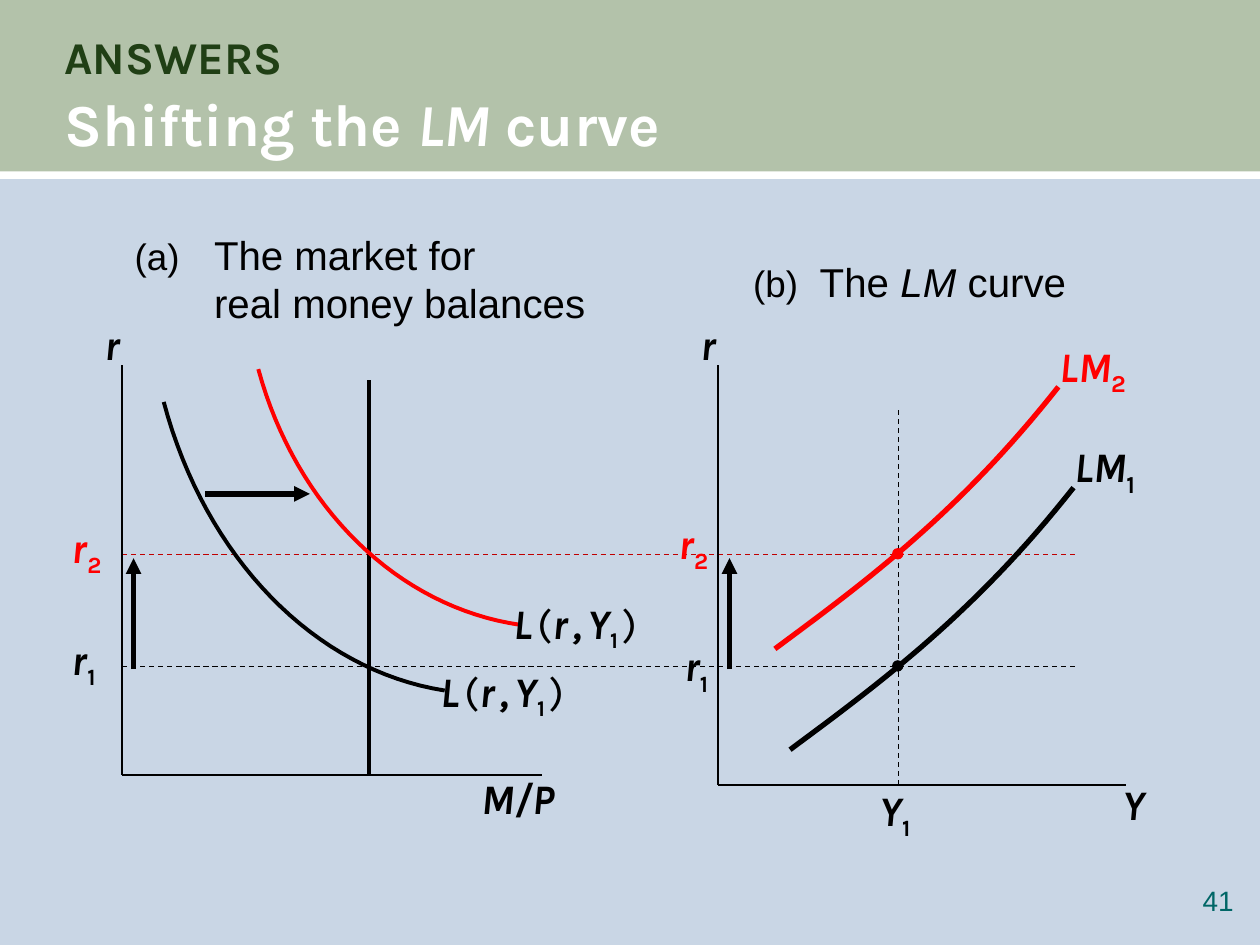
from lxml import etree
from pptx import Presentation
from pptx.dml.color import RGBColor
from pptx.enum import dml, shapes, text
from pptx.oxml import ns
from pptx.util import Inches, Pt

BLACK = RGBColor(0x00, 0x00, 0x00)
WHITE = RGBColor(0xFF, 0xFF, 0xFF)
RED = RGBColor(0xFF, 0x00, 0x00)
DARK_RED = RGBColor(0xC0, 0x00, 0x00)
SKY = RGBColor(0xC9, 0xD6, 0xE5)
SAGE = RGBColor(0xB3, 0xC2, 0xAA)
FOREST = RGBColor(0x20, 0x3F, 0x15)
TEAL = RGBColor(0x00, 0x66, 0x66)

INSETS = (0.1, 0.05, 0.1, 0.05)
LABEL = {"name": "Karla", "size": 24, "bold": True, "italic": True}
SUB = {"size": 23, "italic": False, "baseline": -25000}
CAPTION = {"name": "Arial", "size": 23}


def add_run(p, content, color, fmt):
    """Append a run formatted from a dict of font values."""
    r = p.add_run()
    r.text = content
    r.font.color.rgb = fmt.get("color", color)
    for name in ("name", "bold", "italic"):
        setattr(r.font, name, fmt.get(name))
    r.font.size = Pt(fmt["size"])
    if "baseline" in fmt:
        r._r.get_or_add_rPr().set("baseline", str(fmt["baseline"]))


def add_text(s, x, y, w, h, lines, base, color=BLACK, insets=INSETS,
             align=text.PP_ALIGN.LEFT, anchor=text.MSO_ANCHOR.TOP):
    """Add a text box of lines, each a list of (text, changes) runs."""
    tf = s.shapes.add_textbox(Inches(x), Inches(y), Inches(w), Inches(h)).text_frame
    tf.word_wrap = True
    tf.vertical_anchor = anchor
    for side, inset in zip(("left", "top", "right", "bottom"), insets):
        setattr(tf, "margin_" + side, Inches(inset))
    p = tf.paragraphs[0]
    p.alignment = align
    for i, line in enumerate(lines):
        if i:
            p.add_line_break()
        for content, changes in line:
            add_run(p, content, color, {**base, **changes})
    return p


def add_label(s, x, y, w, name, sub="", color=BLACK, sub_fmt=SUB, **layout):
    """Add an italic symbol with an optional subscript."""
    runs = [(name, {})] + ([(sub, sub_fmt)] if sub else [])
    add_text(s, x, y, w, 0.5, [runs], LABEL, color, **layout)


def add_line(s, x1, y1, x2, y2, width, color=BLACK, dashed=False, arrow=False):
    """Add a straight line, optionally dashed or with an end arrowhead."""
    ends = [Inches(v) for v in (x1, y1, x2, y2)]
    sp = s.shapes.add_connector(shapes.MSO_CONNECTOR.STRAIGHT, *ends)
    sp.line.width = Pt(width)
    sp.line.color.rgb = color
    if dashed:
        sp.line.dash_style = dml.MSO_LINE.DASH
    if arrow:
        etree.SubElement(sp.line._get_or_add_ln(), ns.qn("a:tailEnd"), type="triangle")
    etree.SubElement(sp._element.spPr, ns.qn("a:effectLst"))


def add_curve(s, x, y, controls, width, color, steps=32):
    """Draw a cubic Bezier curve with its controls offset by x and y."""
    points = []
    for i in range(steps + 1):
        t = i / steps
        weights = ((1 - t) ** 3, 3 * t * (1 - t) ** 2, 3 * t * t * (1 - t), t ** 3)
        px, py = (sum(k * c for k, c in zip(weights, axis)) for axis in zip(*controls))
        points.append((Inches(x + px), Inches(y + py)))
    builder = s.shapes.build_freeform(*points[0])
    builder.add_line_segments(points[1:], close=False)
    sp = builder.convert_to_shape()
    sp.shadow.inherit = False
    sp.fill.background()
    sp.line.color.rgb = color
    sp.line.width = Pt(width)


def add_solid(s, kind, x, y, w, h, color):
    """Add a filled shape without an outline."""
    sp = s.shapes.add_shape(kind, Inches(x), Inches(y), Inches(w), Inches(h))
    sp.shadow.inherit = False
    sp.fill.solid()
    sp.fill.fore_color.rgb = color
    sp.line.fill.background()


def add_header(s, x, y, w, h):
    """Place the title band, its rule and the two-line title."""
    rect = shapes.MSO_SHAPE.RECTANGLE
    add_solid(s, rect, x, y, w, h, SAGE)
    add_solid(s, rect, x, y + h - 0.04, w, 0.06, WHITE)
    lines = [[("ANSWERS", {"size": 26, "color": FOREST})],
             [("Shifting the ", {}), ("LM", {"italic": True}), (" curve", {})]]
    p = add_text(s, x + 0.51, y + 0.22, w - 0.98, 1.03, lines,
                 {"name": "Karla", "size": 34, "bold": True}, WHITE,
                 insets=(0, 0, 0, 0), anchor=text.MSO_ANCHOR.MIDDLE)
    p.line_spacing = 1.05


def add_axes(s, x, y, w, h):
    """Draw the axes, the r label and the arrow for the rise in r."""
    add_line(s, x, y, x, y + h, 1)
    add_line(s, x, y + h, x + w, y + h, 1)
    add_label(s, x - 0.24, y - 0.42, 0.5, "r")
    add_line(s, x + 0.09, y + 2.41, x + 0.09, y + 1.53, 3, arrow=True)


def add_rates(s, x, y, w, tops, align):
    """Place the labels of the two interest rates."""
    for sub, top, color in zip("12", tops, (BLACK, RED)):
        add_label(s, x, y + top, w, "r", sub, color,
                  insets=(0.1, 0.05, 0, 0.1), align=align)


def add_guides(s, x, y, w):
    """Draw the dashed lines that join the rates across both panels."""
    add_line(s, x, y + 2.39, x + w, y + 2.39, 0.75, dashed=True)
    add_line(s, x, y + 1.5, x + w, y + 1.5, 0.75, DARK_RED, dashed=True)


def add_money_market(s, x, y, w, h):
    """Place panel (a): money supply and the two demand curves."""
    add_axes(s, x, y, w, h)
    p = add_text(s, x, y - 1.12, 3.92, 0.87,
                 [[("(a)", {"size": 21}), ("\tThe market for", {})],
                  [("real money balances", {})]], CAPTION)
    for name, value in (("marL", 0.63), ("indent", -0.63)):
        p._p.get_or_add_pPr().set(name, str(Inches(value)))
    add_label(s, x + 2.75, y + 3.18, 1, "M/P")
    add_line(s, x + 1.96, y + h, x + 1.96, y + 0.12, 2.25)
    add_rates(s, x - 0.5, y, 0.5, (2.08, 1.19), text.PP_ALIGN.LEFT)
    plain, thin = {"bold": False, "italic": False}, {"size": 12}
    demand = [("L", {}), (" ", thin), ("(", plain), ("r", {}), (" ", thin), (",", {}),
              (" ", thin), ("Y", {}), ("1", {**SUB, "size": 22}), (" ", thin), (")", plain)]
    curves = (
        (((2.56, 2.58), (1.53, 2.42), (0.66, 1.53), (0.33, 0.29)), BLACK, (2.43, 2.33)),
        (((3.16, 2.06), (2.19, 1.92), (1.38, 1.13), (1.08, 0.03)), RED, (3.01, 1.79)),
    )
    for controls, color, (dx, dy) in curves:
        add_curve(s, x, y, controls, 2.25, color)
        add_text(s, x + dx, y + dy, 1.65, 0.5, [demand], LABEL)
    add_line(s, x + 0.66, y + 1.02, x + 1.49, y + 1.02, 3, arrow=True)


def add_lm_panel(s, x, y, w, h):
    """Place panel (b): the LM curve before and after the shift."""
    add_axes(s, x, y, w, h)
    add_text(s, x + 0.18, y - 0.91, 3, 0.48,
             [[("(b)", {"size": 21}), ("  The ", {}), ("LM", {"italic": True}),
               (" curve", {})]], CAPTION)
    add_label(s, x + 3.11, y + 3.23, 0.5, "Y")
    add_line(s, x + 1.43, y + h, x + 1.43, y + 0.33, 0.75, dashed=True)
    add_label(s, x + 1.18, y + 3.28, 0.58, "Y", "1")
    add_rates(s, x - 0.49, y, 0.41, (2.13, 1.16), text.PP_ALIGN.RIGHT)
    controls = ((0.57, 3.05), (1.3, 2.51), (2.04, 1.96), (2.82, 0.97))
    shifts = (("1", 0, 0, BLACK, 2.39), ("2", -0.12, -0.8, RED, 1.5))
    for sub, dx, dy, color, rate in shifts:
        add_curve(s, x + dx, y + dy, controls, 3, color)
        add_label(s, x + dx + 2.73, y + dy + 0.55, 1, "LM", sub, color, {**SUB, "size": 24})
        add_solid(s, shapes.MSO_SHAPE.OVAL, x + 1.38, y + rate - 0.05, 0.09, 0.09, color)


def main():
    """Build the slide and save it."""
    prs = Presentation()
    prs.slide_width, prs.slide_height = Inches(10), Inches(7.5)
    s = prs.slides.add_slide(prs.slide_layouts[6])
    s.background.fill.solid()
    s.background.fill.fore_color.rgb = SKY
    add_header(s, 0, 0, 10, 1.4)
    add_guides(s, 0.97, 2.9, 7.58)
    add_money_market(s, 0.97, 2.9, 3.33, 3.25)
    add_lm_panel(s, 5.7, 2.9, 3.24, 3.33)
    add_text(s, 9.24, 7.01, 0.55, 0.32, [[("41", {})]], {"name": "Arial", "size": 16},
             TEAL, insets=(0, 0, 0, 0), align=text.PP_ALIGN.RIGHT)
    prs.save("out.pptx")


if __name__ == "__main__":
    main()
